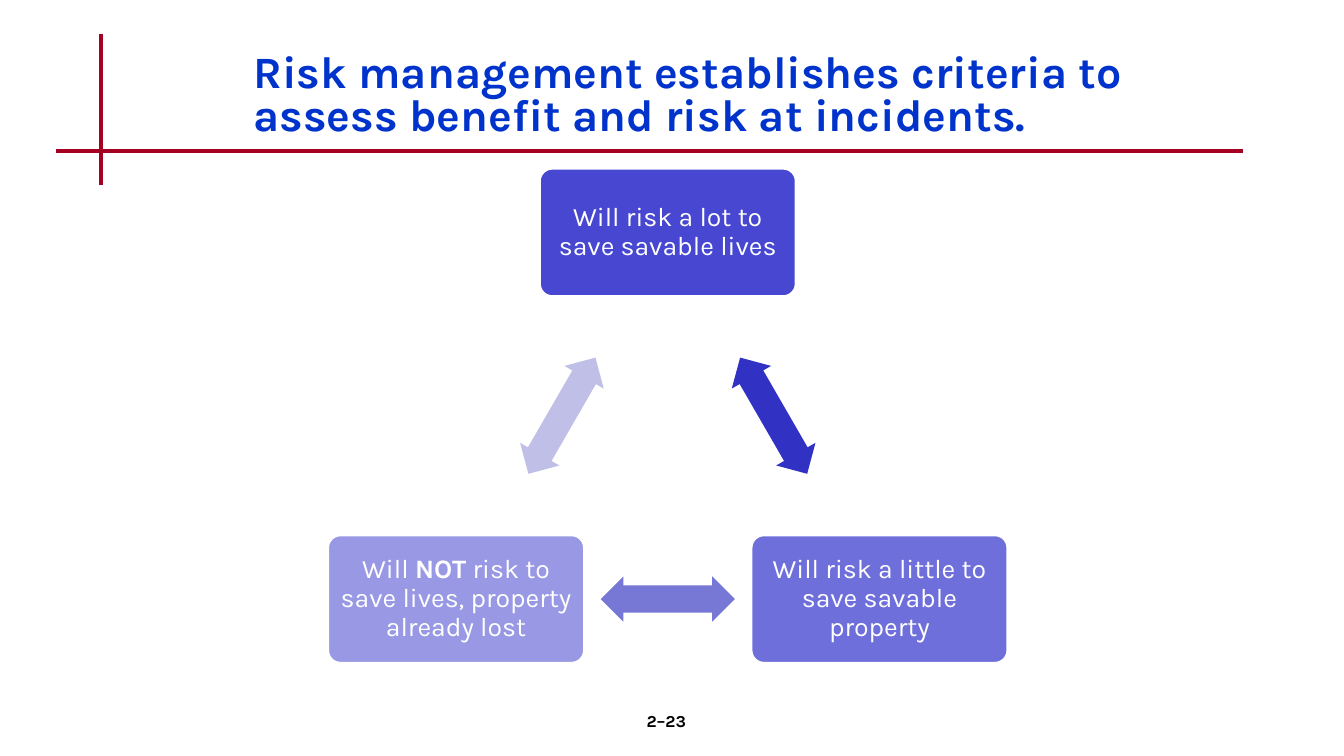
import math
from dataclasses import dataclass

import pptx
import pptx.dml.color
import pptx.enum.shapes
import pptx.enum.text
import pptx.oxml.ns
import pptx.util
from lxml import etree

Pt = pptx.util.Pt
MSO_SHAPE = pptx.enum.shapes.MSO_SHAPE
PP_ALIGN = pptx.enum.text.PP_ALIGN
MSO_ANCHOR = pptx.enum.text.MSO_ANCHOR

FONT = "Karla"
COLORS = {
    "rule": "A50021",
    "title": "0033CC",
    "card": "3333CC",
    "white": "FFFFFF",
    "black": "000000",
}

# Cards sit on a circle, with an arrow halfway between each pair
CENTER_X, CENTER_Y, RADIUS = 477, 340.6, 174.6
CARD_W, CARD_H = 183.4, 91.7
ARROW_W, ARROW_H = 95.8, 32.4


@dataclass
class Rule:
    x1: float
    y1: float
    x2: float
    y2: float


@dataclass
class Card:
    runs: list[tuple[str, bool]]
    opacity: int
    arrow_color: str


RULES = [Rule(72, 24, 72, 132), Rule(40, 108, 888, 108)]
CARDS = [
    Card([("Will risk a lot to save savable lives", False)], 90, "3131C3"),
    Card([("Will risk a little to save savable property", False)], 70, "7777D5"),
    Card([("Will ", False), ("NOT", True),
          (" risk to save lives, property already lost", False)], 50, "BFBFE7"),
]


def rgb(color: str) -> pptx.dml.color.RGBColor:
    return pptx.dml.color.RGBColor.from_string(color)


def style(p, size: float, color: str) -> None:
    p.font.name = FONT
    p.font.size = Pt(size)
    p.font.color.rgb = rgb(color)


def card_center(index: int) -> tuple[float, float]:
    angle = math.radians(120 * index - 90)
    return CENTER_X + RADIUS * math.cos(angle), CENTER_Y + RADIUS * math.sin(angle)


def add_rule(s, rule: Rule) -> None:
    line = s.shapes.add_connector(
        pptx.enum.shapes.MSO_CONNECTOR.STRAIGHT,
        Pt(rule.x1), Pt(rule.y1), Pt(rule.x2), Pt(rule.y2))
    line.line.color.rgb = rgb(COLORS["rule"])
    line.line.width = Pt(3)
    etree.SubElement(line._element.spPr, pptx.oxml.ns.qn("a:effectLst"))


def add_centered(s, kind, x: float, y: float, w: float, h: float, color: str):
    sp = s.shapes.add_shape(kind, Pt(x - w / 2), Pt(y - h / 2), Pt(w), Pt(h))
    sp.shadow.inherit = False
    sp.fill.solid()
    sp.fill.fore_color.rgb = rgb(color)
    return sp


def add_card(s, card: Card, index: int) -> None:
    sp = add_centered(s, MSO_SHAPE.ROUNDED_RECTANGLE, *card_center(index),
                      CARD_W, CARD_H, COLORS["card"])
    sp.adjustments[0] = 0.1
    fill = sp._element.spPr.find(".//" + pptx.oxml.ns.qn("a:srgbClr"))
    etree.SubElement(fill, pptx.oxml.ns.qn("a:alpha"), val=str(card.opacity * 1000))
    sp.line.color.rgb = rgb(COLORS["white"])
    sp.line.width = Pt(2)

    tf = sp.text_frame
    tf.word_wrap = True
    tf.vertical_anchor = MSO_ANCHOR.MIDDLE
    tf.margin_left = tf.margin_right = tf.margin_top = tf.margin_bottom = Pt(6)
    p = tf.paragraphs[0]
    p.alignment = PP_ALIGN.CENTER
    p.line_spacing = 0.9
    style(p, 19, COLORS["white"])
    for text, bold in card.runs:
        r = p.add_run()
        r.text = text
        r.font.bold = bold


def add_arrow(s, card: Card, index: int) -> None:
    x1, y1 = card_center(index)
    x2, y2 = card_center(index + 1)
    sp = add_centered(s, MSO_SHAPE.LEFT_RIGHT_ARROW, (x1 + x2) / 2, (y1 + y2) / 2,
                      ARROW_W, ARROW_H, card.arrow_color)
    sp.adjustments[0] = 0.6
    sp.adjustments[1] = 0.5
    sp.rotation = 60 + 120 * index
    sp.line.fill.background()


def add_text(s, text: str, x: float, y: float, w: float, h: float,
             size: float, color: str):
    tf = s.shapes.add_textbox(Pt(x), Pt(y), Pt(w), Pt(h)).text_frame
    tf.word_wrap = True
    p = tf.paragraphs[0]
    p.text = text
    style(p, size, color)
    p.font.bold = True
    return tf


def main() -> None:
    prs = pptx.Presentation()
    prs.slide_width, prs.slide_height = Pt(960), Pt(540)
    s = prs.slides.add_slide(prs.slide_layouts[6])

    # Crossed rules
    for rule in RULES:
        add_rule(s, rule)

    # Cycle of cards and arrows
    for index, card in enumerate(CARDS):
        add_card(s, card, index)
        add_arrow(s, card, index)

    # Title
    tf = add_text(
        s, "Risk management establishes criteria to assess benefit and risk at incidents.",
        174, 24, 654, 90, 32, COLORS["title"])
    tf.vertical_anchor = MSO_ANCHOR.MIDDLE
    tf.paragraphs[0].line_spacing = 0.8

    # Page number
    tf = add_text(s, "2–23", 376, 504, 200, 36, 12, COLORS["black"])
    tf.paragraphs[0].alignment = PP_ALIGN.CENTER

    prs.save("out.pptx")


if __name__ == "__main__":
    main()
